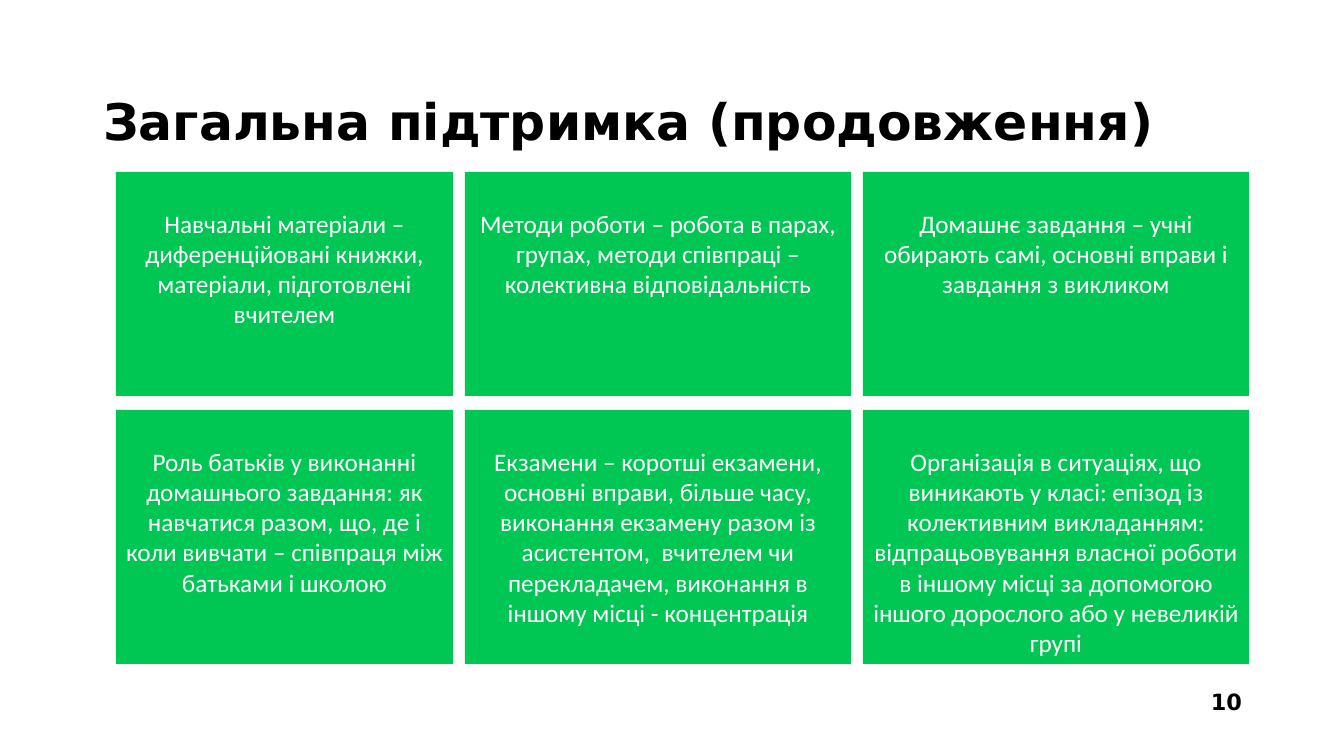
from pptx import Presentation
from pptx.dml.color import RGBColor
from pptx.enum import shapes, text

HEADING = "Загальна підтримка (продовження)"
PAGE_NUMBER = "10"
SUPPORT_ROWS = [
    [
        ["Навчальні матеріали – диференційовані книжки, матеріали, підготовлені вчителем"],
        ["Методи роботи – робота в парах, групах, методи співпраці – колективна відповідальність"],
        ["Домашнє завдання – учні обирають самі, основні вправи і завдання з викликом"],
    ],
    [
        [
            "Роль батьків у виконанні",
            "домашнього завдання: як навчатися разом, що, де і коли вивчати – співпраця між батьками і школою",
        ],
        ["Екзамени – коротші екзамени, основні вправи, більше часу, виконання екзамену разом із асистентом,  вчителем чи перекладачем, виконання в іншому місці - концентрація"],
        ["Організація в ситуаціях, що виникають у класі: епізод із колективним викладанням: відпрацьовування власної роботи в іншому місці за допомогою іншого дорослого або у невеликій групі"],
    ],
]

GREEN = RGBColor(0x00, 0xC6, 0x54)
WHITE = RGBColor(0xFF, 0xFF, 0xFF)
BLACK = RGBColor(0x00, 0x00, 0x00)
SLIDE_WIDTH, SLIDE_HEIGHT = 1344, 756
EMU_PER_PX = 12192000 / SLIDE_WIDTH
GRID_LEFT, GRID_TOP = 116, 172
COLUMN_WIDTHS = [337, 386, 386]
ROW_HEIGHTS = [224, 254]
COLUMN_GAP, ROW_GAP = 12, 14
CARD_TOP_MARGIN = 36


def px(length):
    return round(length * EMU_PER_PX)


def pt(size):
    return size * 12700


def style(paragraph, font_name, size, color, align, bold=False):
    paragraph.alignment = align
    paragraph.font.name = font_name
    paragraph.font.size = pt(size)
    paragraph.font.bold = bold
    paragraph.font.color.rgb = color


def fill_frame(frame, lines, anchor, *font):
    frame.word_wrap = True
    frame.auto_size = text.MSO_AUTO_SIZE.NONE
    frame.vertical_anchor = anchor
    frame.text = "\n".join(lines)
    for paragraph in frame.paragraphs:
        style(paragraph, *font)


def add_card(slide, lines, left, top, width, height):
    card = slide.shapes.add_shape(
        shapes.MSO_SHAPE.RECTANGLE, px(left), px(top), px(width), px(height))
    card.shadow.inherit = False
    card.fill.solid()
    card.fill.fore_color.rgb = GREEN
    card.line.fill.background()
    card.text_frame.margin_top = px(CARD_TOP_MARGIN)
    fill_frame(card.text_frame, lines, text.MSO_ANCHOR.TOP,
               "Calibri", 18, WHITE, text.PP_ALIGN.CENTER)


def main():
    deck = Presentation()
    deck.slide_width, deck.slide_height = px(SLIDE_WIDTH), px(SLIDE_HEIGHT)
    slide = deck.slides.add_slide(deck.slide_layouts[5])

    heading = slide.shapes.title
    heading.left, heading.top = px(93), px(40)
    heading.width, heading.height = px(1159), px(146)
    fill_frame(heading.text_frame, [HEADING], text.MSO_ANCHOR.MIDDLE,
               "DejaVu Sans", 36, BLACK, text.PP_ALIGN.LEFT, True)
    heading.text_frame.paragraphs[0].line_spacing = 1.25

    top = GRID_TOP
    for row, height in zip(SUPPORT_ROWS, ROW_HEIGHTS):
        left = GRID_LEFT
        for lines, width in zip(row, COLUMN_WIDTHS):
            add_card(slide, lines, left, top, width, height)
            left += width + COLUMN_GAP
        top += height + ROW_GAP

    page_number = slide.shapes.add_textbox(px(1167), px(682), px(85), px(40))
    fill_frame(page_number.text_frame, [PAGE_NUMBER], text.MSO_ANCHOR.MIDDLE,
               "DejaVu Sans", 16, BLACK, text.PP_ALIGN.RIGHT, True)

    deck.save("out.pptx")


if __name__ == "__main__":
    main()
